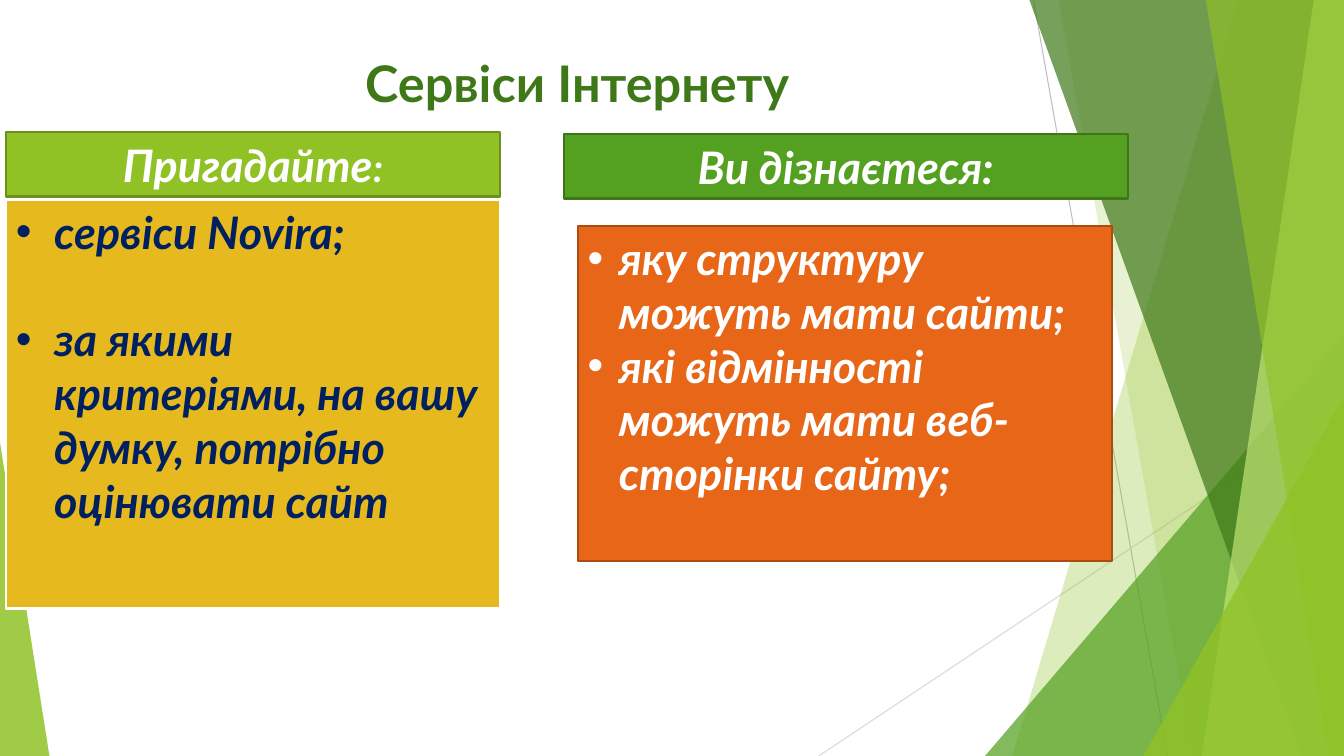
from lxml import etree
from pptx import Presentation
from pptx import util as u
from pptx.dml.color import RGBColor
from pptx.enum import shapes, text
from pptx.oxml.ns import qn

WHITE = RGBColor(0xFF, 0xFF, 0xFF)
NAVY = RGBColor(0x00, 0x20, 0x60)
LIME = RGBColor(0x90, 0xC2, 0x26)
LIME_EDGE = RGBColor(0x6B, 0x90, 0x1C)
LIME_PALE = RGBColor(0xC0, 0xE4, 0x74)
GREEN = RGBColor(0x54, 0xA0, 0x21)
GREEN_EDGE = RGBColor(0x3E, 0x76, 0x18)
GREEN_DARK = RGBColor(0x3F, 0x78, 0x19)
GOLD = RGBColor(0xE6, 0xB9, 0x1E)
ORANGE = RGBColor(0xE7, 0x66, 0x18)
ORANGE_EDGE = RGBColor(0xAB, 0x4B, 0x12)
GREY = RGBColor(0xBF, 0xBF, 0xBF)
GREY_PALE = RGBColor(0xD9, 0xD9, 0xD9)

W, H = 13.33, 7.5


class Deck:
    font = "Lato"
    size = 32

    def __init__(self):
        self.prs = Presentation()
        self.prs.slide_width, self.prs.slide_height = u.Inches(W), u.Inches(H)
        self.s = self.prs.slides.add_slide(self.prs.slide_layouts[6])

    def line(self, x1, y1, x2, y2, color):
        c = self.s.shapes.add_connector(
            shapes.MSO_CONNECTOR.STRAIGHT, *map(u.Inches, (x1, y1, x2, y2)))
        c.line.color.rgb, c.line.width = color, u.Pt(0.75)
        etree.SubElement(c.element.spPr, qn("a:effectLst"))

    def glass(self, sp, color, alpha):
        """Borderless fill with the given opacity in percent."""
        sp.shadow.inherit = False
        sp.fill.solid()
        sp.fill.fore_color.rgb = color
        sp.line.fill.background()
        clr = sp.element.spPr.find(qn("a:solidFill")).find(qn("a:srgbClr"))
        etree.SubElement(clr, qn("a:alpha")).set("val", str(alpha * 1000))

    def band(self, top_x, bottom_x, color, alpha):
        """Area from a slanted edge to the right side of the slide."""
        points = [(u.Inches(x), u.Inches(y))
                  for x, y in ((top_x, 0), (W, 0), (W, H), (bottom_x, H))]
        fb = self.s.shapes.build_freeform(*points[0])
        fb.add_line_segments(points[1:], close=True)
        self.glass(fb.convert_to_shape(), color, alpha)

    def triangle(self, x, y, w, apex, color, alpha):
        """Triangle standing on the bottom edge of the slide."""
        sp = self.s.shapes.add_shape(
            shapes.MSO_SHAPE.ISOSCELES_TRIANGLE, *map(u.Inches, (x, y, w, H - y)))
        sp.adjustments[0] = apex
        self.glass(sp, color, alpha)

    def style(self, p, color, size, italic=True):
        for r in p.runs:
            r.font.name, r.font.size = self.font, u.Pt(size)
            r.font.bold, r.font.italic = True, italic
            r.font.color.rgb = color

    def title(self, x, y, w, h, words):
        tf = self.s.shapes.add_textbox(*map(u.Inches, (x, y, w, h))).text_frame
        tf.word_wrap = True
        tf.text = words
        p = tf.paragraphs[0]
        p.alignment = text.PP_ALIGN.CENTER
        self.style(p, GREEN_DARK, 36, italic=False)

    def box(self, x, y, w, h, fill, edge, width=1.5):
        sp = self.s.shapes.add_shape(
            shapes.MSO_SHAPE.RECTANGLE, *map(u.Inches, (x, y, w, h)))
        sp.shadow.inherit = False
        sp.fill.solid()
        sp.fill.fore_color.rgb = fill
        sp.line.color.rgb, sp.line.width = edge, u.Pt(width)
        sp.text_frame.word_wrap = True
        return sp.text_frame

    def header(self, x, y, w, h, fill, edge, words, colon_size):
        tf = self.box(x, y, w, h, fill, edge)
        tf.vertical_anchor = text.MSO_ANCHOR.MIDDLE
        p = tf.paragraphs[0]
        p.alignment = text.PP_ALIGN.CENTER
        p.text = words
        p.add_run().text = ":"
        self.style(p, WHITE, self.size)
        p.runs[-1].font.size = u.Pt(colon_size)

    def bullets(self, tf, items, color, indent, gap=0):
        tf.vertical_anchor = text.MSO_ANCHOR.TOP
        for i, item in enumerate(items):
            p = tf.add_paragraph() if i else tf.paragraphs[0]
            p.text = item
            p.alignment = text.PP_ALIGN.LEFT
            p.space_before = u.Pt(gap if i else 0)
            self.style(p, color, self.size)
            pPr = p._p.get_or_add_pPr()
            pPr.set("marL", str(u.Inches(indent)))
            pPr.set("indent", str(-u.Inches(indent)))
            etree.SubElement(pPr, qn("a:buFont")).set("typeface", "Arial")
            etree.SubElement(pPr, qn("a:buChar")).set("char", "•")


def main():
    d = Deck()

    # Background facets
    d.line(10.25, 0, 11.58, H, GREY)
    d.line(W, 4.03, 8.12, H, GREY_PALE)
    d.band(12.28, 10.04, LIME, 30)
    d.band(10.5, 11.83, LIME, 20)
    d.triangle(9.77, 3.33, 3.56, 1, GREEN, 72)
    d.band(10.21, 12.91, GREEN_DARK, 70)
    d.band(13.03, 11.92, LIME_PALE, 70)
    d.band(11.96, 13.18, LIME, 65)
    d.triangle(11.34, 3.93, 1.99, 1, LIME, 80)
    d.triangle(0, 4.39, 0.49, 0, LIME, 85)

    # Title and column headers
    d.title(0.43, 0.47, 10.59, 0.9, "Сервіси Інтернету")
    d.header(0.06, 1.31, 4.9, 0.64, LIME, LIME_EDGE, "Пригадайте", 28)
    d.header(5.59, 1.33, 5.6, 0.64, GREEN, GREEN_EDGE, "Ви дізнаєтеся", 32)

    # Column lists
    recall = d.box(0.06, 1.98, 4.9, 4.06, GOLD, WHITE, 2)
    d.bullets(recall, ["сервіси Novira;",
                       "за якими критеріями, на вашу думку, потрібно оцінювати сайт"],
              NAVY, 0.38, gap=38.4)
    learn = d.box(5.73, 2.24, 5.3, 3.33, ORANGE, ORANGE_EDGE)
    d.bullets(learn, ["яку структуру можуть мати сайти;",
                      "які відмінності можуть мати веб-сторінки сайту;"],
              WHITE, 0.31)

    d.prs.save("out.pptx")


if __name__ == "__main__":
    main()
